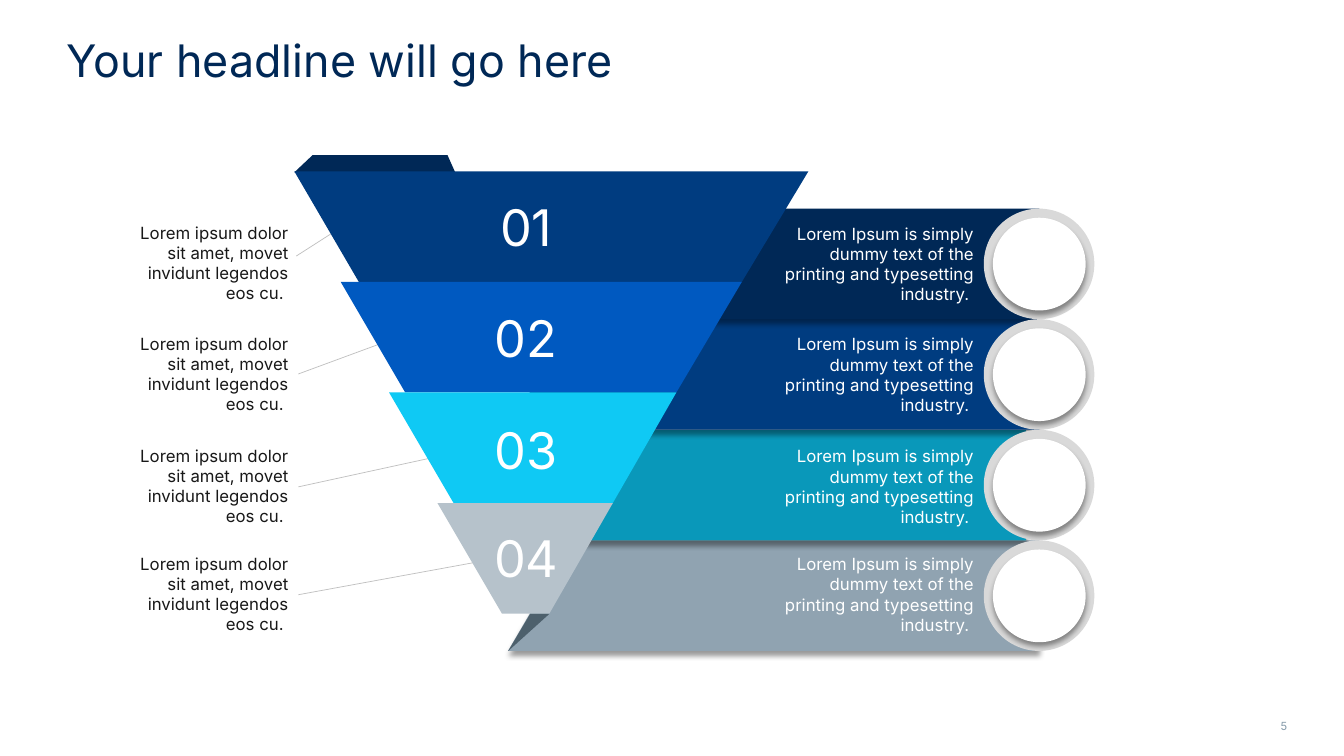
from lxml.etree import SubElement as Sub
from pptx import Presentation
from pptx.dml.color import RGBColor as RGB
from pptx.enum.shapes import MSO_CONNECTOR as Conn, MSO_SHAPE as Kind
from pptx.enum.text import MSO_ANCHOR as Anchor, MSO_AUTO_SIZE as Auto, PP_ALIGN as Align
from pptx.oxml.ns import qn
from pptx.util import Inches, Pt

NAVY = RGB(0x00, 0x28, 0x56)
BLUE = RGB(0x00, 0x3C, 0x80)
ROYAL = RGB(0x00, 0x59, 0xC0)
CYAN = RGB(0x0F, 0xC9, 0xF4)
TEAL = RGB(0x09, 0x98, 0xBA)
SILVER = RGB(0xB6, 0xC2, 0xCB)
STEEL = RGB(0x90, 0xA3, 0xB1)
SLATE = RGB(0x4D, 0x60, 0x6C)
MUTED = RGB(0x88, 0x9D, 0xAC)
RING = RGB(0xD9, 0xD9, 0xD9)
RULE = RGB(0xBF, 0xBF, 0xBF)
INK = RGB(0x18, 0x18, 0x18)
WHITE = RGB(0xFF, 0xFF, 0xFF)

COLS, ROWS = 133.33, 75
PITCH = 10.97
PANEL, LEVEL = 20.7, 17
SLANT = 6.4
RIGHTS = [80.2, 73.6, 67.1, 60.8, 54.5]
LEFT = "Lorem ipsum dolor sit amet, movet invidunt legendos eos cu. "
RIGHT = "Lorem Ipsum is simply dummy text of the printing and typesetting industry. "

# fill, panel fill, panel left, level left, text top, line start, line end
STEPS = [
    (ROYAL, NAVY, 50.4, 29.2, 21.6, (29.4, 25.4), (35.8, 21.3)),
    (ROYAL, BLUE, 50.4, 33.8, 32.6, (29.6, 37.1), (41, 32.9)),
    (CYAN, TEAL, 49.1, 38.6, 43.7, (29.6, 48.3), (48.9, 44.1)),
    (SILVER, STEEL, 50.4, 43.4, 54.4, (29.6, 59), (50.4, 55.2)),
]
FILLS = [BLUE, ROYAL, CYAN, SILVER]


class Board:
    font = "Inter"

    def __init__(self, deck):
        self.deck = deck
        deck.slide_width, deck.slide_height = self.grid(COLS, ROWS)
        self.slide = deck.slides.add_slide(deck.slide_layouts[5])
        self.shapes = self.slide.shapes

    def grid(self, *cells):
        return [Inches(cell / 10) for cell in cells]

    def style(self, frame, text, size, color, align, anchor=Anchor.TOP):
        frame.text = text
        frame.word_wrap = True
        frame.auto_size = Auto.NONE
        frame.vertical_anchor = anchor
        para = frame.paragraphs[0]
        para.alignment = align
        font = para.runs[0].font
        font.name, font.size = self.font, Pt(size)
        font.color.rgb = color

    def title(self, text, *box):
        head = self.shapes.title
        head.left, head.top, head.width, head.height = self.grid(*box)
        self.style(head.text_frame, text, 32, NAVY, Align.LEFT)

    def text(self, text, box, size, color, align=Align.RIGHT, anchor=Anchor.TOP):
        area = self.shapes.add_textbox(*self.grid(*box))
        self.style(area.text_frame, text, size, color, align, anchor)

    def paint(self, shape, fill, shade):
        shape.fill.solid()
        shape.fill.fore_color.rgb = fill
        shape.line.fill.background()
        shape.shadow.inherit = False
        if shade:
            effect = shape.element.spPr.find(qn("a:effectLst"))
            cast = Sub(effect, qn("a:outerShdw"), blurRad=str(Pt(4)),
                       dist=str(Pt(3)), dir="5400000", algn="t", rotWithShape="0")
            tone = Sub(cast, qn("a:srgbClr"), val="000000")
            Sub(tone, qn("a:alpha"), val="40000")

    def shape(self, points, fill, shade=False):
        start, *rest = [self.grid(*point) for point in points]
        path = self.shapes.build_freeform(*start)
        path.add_line_segments(rest)
        self.paint(path.convert_to_shape(), fill, shade)

    def disc(self, x, y, size, fill, shade=False):
        oval = self.shapes.add_shape(Kind.OVAL, *self.grid(x, y, size, size))
        self.paint(oval, fill, shade)

    def line(self, start, end):
        rule = self.shapes.add_connector(Conn.STRAIGHT, *self.grid(*start, *end))
        rule.line.color.rgb = RULE
        rule.line.width = Pt(0.5)
        Sub(rule.element.spPr, qn("a:effectLst"))


def main():
    deck = Presentation()
    board = Board(deck)
    board.title("Your headline will go here", 5.6, 2.7, 122, 5.9)
    board.text("5", (123.1, 70.9, 5.6, 2.4), 8, MUTED)

    for *_, start, end in STEPS:
        board.line(start, end)

    for i, (_, fill, x, *_) in reversed(list(enumerate(STEPS))):
        top = PANEL + i * PITCH
        base, end = top + PITCH, x + 52.7
        board.shape([(end, base), (end, top), (x + SLANT, top), (x, base)], fill, True)

    board.shape([(44.4, 15.4), (31, 15.4), (29.2, 17.1), (31, 17.1),
                 (34.8, 25.7), (49, 25.7)], NAVY)
    for i, (step, fill) in enumerate(zip(STEPS, FILLS)):
        x, top = step[3], LEVEL + i * PITCH
        base = top + PITCH
        board.shape([(x, top), (RIGHTS[i], top), (RIGHTS[i + 1], base),
                     (x + SLANT, base)], fill)
    board.shape([(54.5, 60.9), (50.4, 64.6), (52.6, 60.9)], SLATE)

    for i, step in enumerate(STEPS):
        top, y = PANEL + i * PITCH, step[4]
        board.disc(97.6, top, PITCH, RING)
        board.disc(98.5, top + 0.9, 9.2, WHITE, True)
        board.text(LEFT, (11.4, y, 18.2, 9.1), 12, INK)
        board.text(f"{i + 1:02}", (47.3, y - 2.7, 9.8, 7.1), 36, WHITE,
                   Align.CENTER, Anchor.MIDDLE)
        board.text(RIGHT, (75.7, y, 21.9, 9.1), 12, WHITE, anchor=Anchor.MIDDLE)

    deck.save("out.pptx")


if __name__ == "__main__":
    main()
